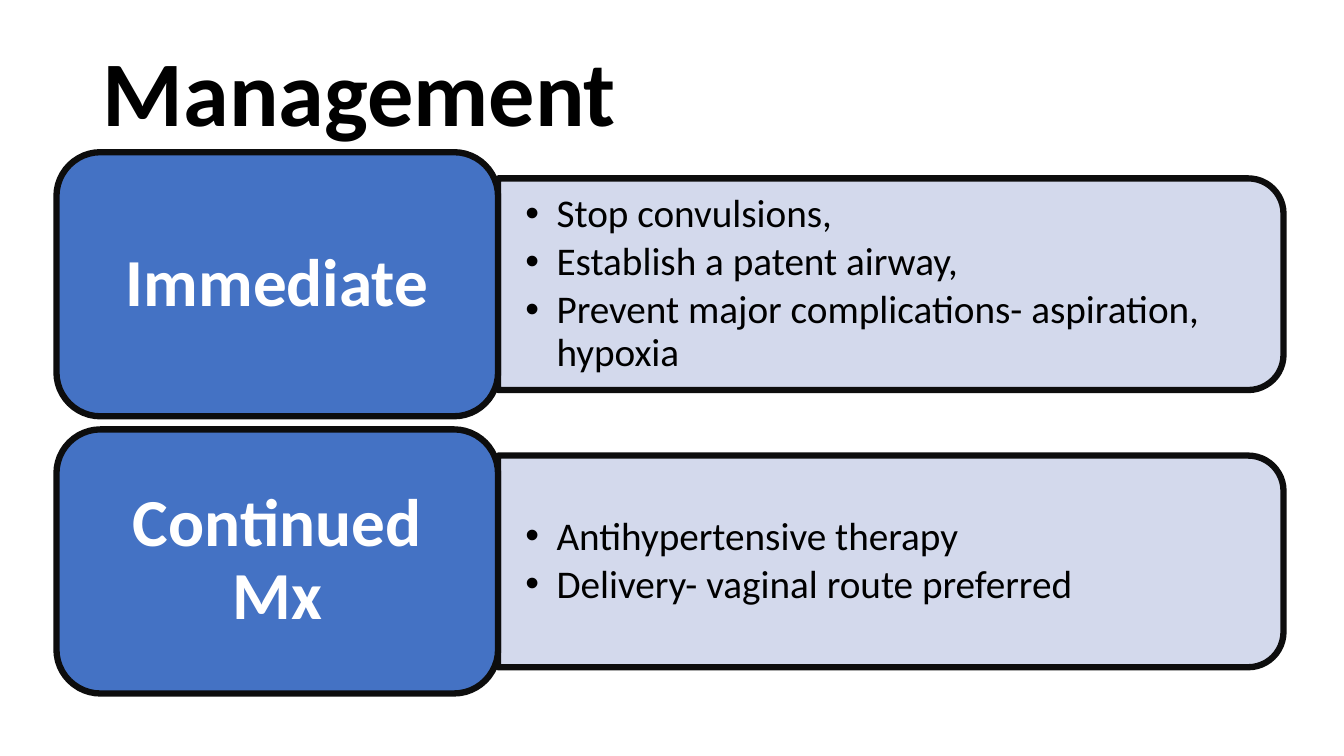
from dataclasses import dataclass

from lxml import etree
from pptx import Presentation
from pptx.dml.color import RGBColor
from pptx.enum import shapes, text
from pptx.oxml import ns
from pptx.util import Inches, Pt


@dataclass(frozen=True)
class Theme:
    font: str = "Calibri"
    black: RGBColor = RGBColor(0x00, 0x00, 0x00)
    white: RGBColor = RGBColor(0xFF, 0xFF, 0xFF)
    outline: RGBColor = RGBColor(0x0D, 0x0D, 0x0D)
    label: RGBColor = RGBColor(0x44, 0x72, 0xC4)
    panel: RGBColor = RGBColor(0xCF, 0xD5, 0xEA)
    title_size: Pt = Pt(66)
    label_size: Pt = Pt(48)
    body_size: Pt = Pt(28)
    line_width: Pt = Pt(4.5)


theme = Theme()


def style_shape(sp, color):
    sp.shadow.inherit = False
    sp.fill.solid()
    sp.fill.fore_color.rgb = color
    sp.line.color.rgb = theme.outline
    sp.line.width = theme.line_width


def style_text(tf, size, color, align, bold=False, margins=(0.1, 0.05)):
    tf.word_wrap = True
    tf.auto_size = text.MSO_AUTO_SIZE.NONE
    tf.vertical_anchor = text.MSO_ANCHOR.MIDDLE
    tf.margin_left = tf.margin_right = Inches(margins[0])
    tf.margin_top = tf.margin_bottom = Inches(margins[1])
    for p in tf.paragraphs:
        p.alignment = align
        p.line_spacing = 0.9
        for r in p.runs:
            r.font.name = theme.font
            r.font.size = size
            r.font.bold = bold
            r.font.color.rgb = color


prs = Presentation()
prs.slide_width, prs.slide_height = Inches(13.33), Inches(7.5)
s = prs.slides.add_slide(prs.slide_layouts[5])

# Title
title = s.shapes.title
title.left, title.top = Inches(0.92), Inches(0.4)
title.width, title.height = Inches(11.5), Inches(1.11)
title.text_frame.text = "Management"
style_text(title.text_frame, theme.title_size, theme.black, text.PP_ALIGN.LEFT, bold=True)

# Management stages: a label on the left, a panel of steps on the right
stages = [
    ("Immediate", ["Stop convulsions,", "Establish a patent airway,",
                   "Prevent major complications- aspiration, hypoxia"]),
    ("Continued Mx", ["Antihypertensive therapy", "Delivery- vaginal route preferred"]),
]
first_top, pitch = 1.51, 2.75
label_left, label_w, label_h = 0.56, 4.38, 2.62
panel_left, panel_w, panel_h = label_left + label_w, 7.79, 2.1

for i, (name, steps) in enumerate(stages):
    top = first_top + i * pitch
    middle = top + label_h / 2

    # Panel, turned a quarter so its rounded corners face right
    panel = s.shapes.add_shape(
        shapes.MSO_SHAPE.ROUND_2_SAME_RECTANGLE,
        Inches(panel_left + (panel_w - panel_h) / 2), Inches(middle - panel_w / 2),
        Inches(panel_h), Inches(panel_w))
    panel.rotation = 90
    style_shape(panel, theme.panel)
    fill_color = panel.fill._xPr.find(ns.qn("a:solidFill"))[0]
    etree.SubElement(fill_color, ns.qn("a:alpha"), val="90000")

    # Bulleted steps
    box = s.shapes.add_textbox(Inches(panel_left), Inches(middle - 0.945),
                               Inches(7.68), Inches(1.89))
    tf = box.text_frame
    tf.text = "\n".join(steps)
    for p in tf.paragraphs:
        p.level = 1
        p.space_after = Pt(4)
        pPr = p._p.get_or_add_pPr()
        pPr.set("marL", str(Inches(0.31)))
        pPr.set("indent", str(-Inches(0.31)))
        etree.SubElement(pPr, ns.qn("a:buFont"), typeface="Arial")
        etree.SubElement(pPr, ns.qn("a:buChar"), char="•")
    style_text(tf, theme.body_size, theme.black, text.PP_ALIGN.LEFT, margins=(0.27, 0.14))

    # Label
    label = s.shapes.add_shape(shapes.MSO_SHAPE.ROUNDED_RECTANGLE, Inches(label_left),
                               Inches(top), Inches(label_w), Inches(label_h))
    style_shape(label, theme.label)
    label.text_frame.text = name
    style_text(label.text_frame, theme.label_size, theme.white, text.PP_ALIGN.CENTER,
               bold=True, margins=(0.2, 0.1))

prs.save("out.pptx")
